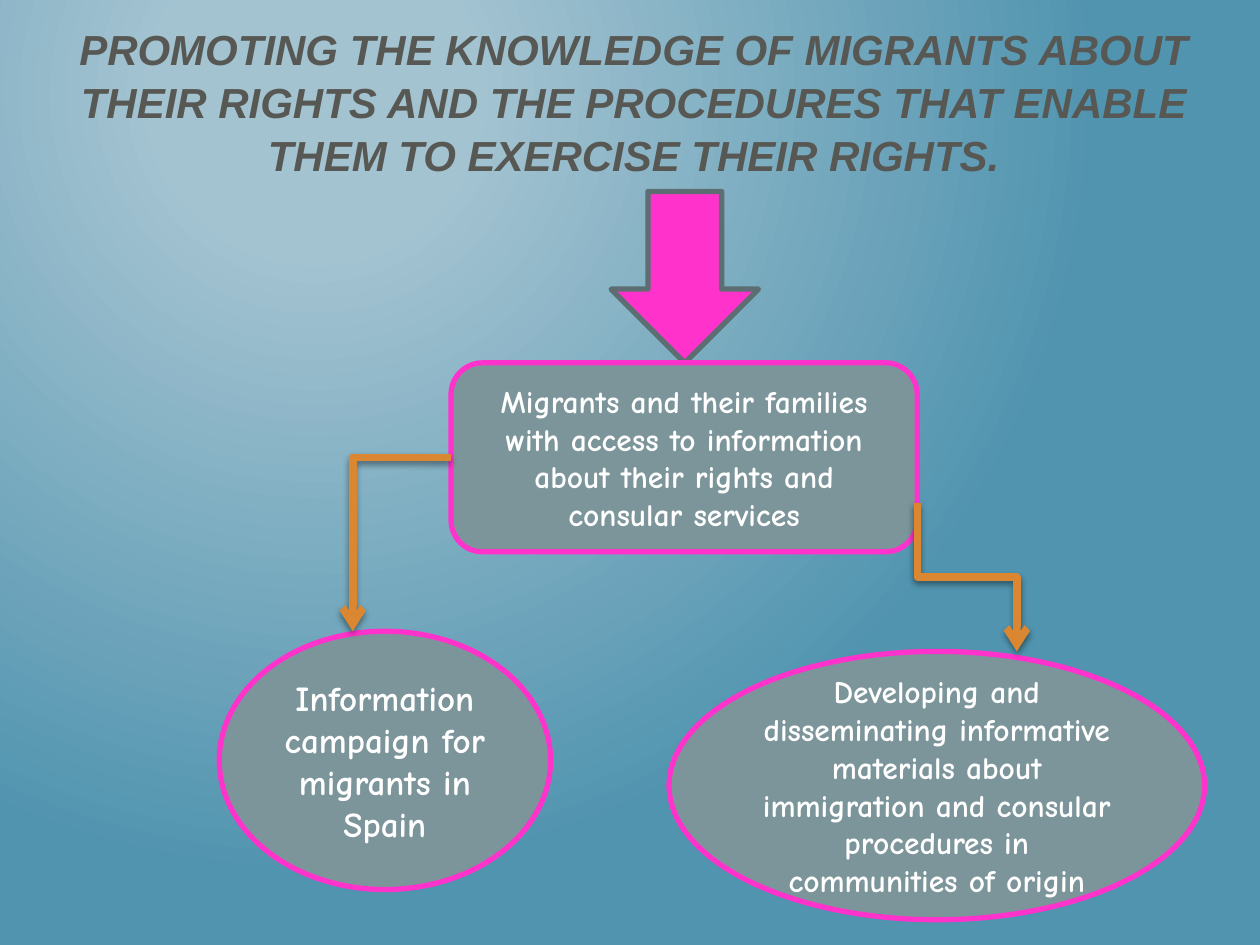
from lxml.etree import SubElement
from pptx import Presentation
from pptx.dml.color import RGBColor
from pptx.enum.shapes import MSO_CONNECTOR, MSO_SHAPE
from pptx.enum.text import MSO_ANCHOR, PP_ALIGN
from pptx.oxml import parse_xml
from pptx.oxml.ns import nsdecls, qn
from pptx.util import Inches, Pt

THEME = {
    "ink": "575853", "text": "FFFFFF", "fill": "7C959A", "pink": "FF33CC",
    "edge": "5C6E72", "link": "DB8631", "glow": "A3C3D1", "back": "5194AF",
    "head": "Arial", "body": "Comic Neue",
    "title": 24, "large": 20, "small": 18, "line": 3, "wire": 4.3,
}
TITLE = ("PROMOTING THE KNOWLEDGE OF MIGRANTS ABOUT THEIR RIGHTS AND THE "
         "PROCEDURES THAT ENABLE THEM TO EXERCISE THEIR RIGHTS.")
SHAPES = [
    (MSO_SHAPE.OVAL, (1.74, 5.01, 2.63, 2.05), "fill", "pink", "large",
     "Information campaign for migrants in Spain"),
    (MSO_SHAPE.DOWN_ARROW, (4.85, 1.52, 1.17, 1.36), "pink", "edge", "small", ""),
    (MSO_SHAPE.ROUNDED_RECTANGLE, (3.58, 2.88, 3.7, 1.5), "fill", "pink", "small",
     "Migrants and their families with access to information about their "
     "rights and consular services"),
    (MSO_SHAPE.OVAL, (5.31, 5.17, 4.25, 2.13), "fill", "pink", "small",
     "Developing and disseminating informative materials about immigration "
     "and consular procedures in communities of origin"),
]
LINKS = [
    ((7.28, 3.99), (8.07, 5.17), "bentConnector3"),
    ((3.58, 3.63), (2.8, 5.01), "bentConnector2"),
]
SHADE = (f'<a:effectLst {nsdecls("a")}><a:outerShdw blurRad="{Pt(4)}" dist="{Pt(2)}" '
         'dir="5400000" rotWithShape="0"><a:srgbClr val="000000"><a:alpha val="44000"/>'
         '</a:srgbClr></a:outerShdw></a:effectLst>')
GLOW = (f'<a:path {nsdecls("a")} path="circle">'
        '<a:fillToRect l="50000" t="20000" r="100000" b="100000"/></a:path>')


def color(key):
    return RGBColor.from_string(THEME[key])


def paint(slide):
    fill = slide.background.fill
    fill.gradient()
    for stop, key, place in zip(fill.gradient_stops, ("glow", "back"), (0.2, 1)):
        stop.color.rgb = color(key)
        stop.position = place
    grad = slide.element.find(".//" + qn("a:gradFill"))
    grad.replace(grad.find(qn("a:lin")), parse_xml(GLOW))


def write(shape, text, face, size, ink, slant=False):
    frame = shape.text_frame
    frame.word_wrap = True
    para = frame.paragraphs[0]
    para.text = text
    para.alignment = PP_ALIGN.CENTER
    font = para.font
    font.name, font.size = THEME[face], Pt(THEME[size])
    font.bold, font.italic = True, slant
    font.color.rgb = color(ink)
    return frame


def draw(slide, kind, box, fill, line, size, text):
    shape = slide.shapes.add_shape(kind, *map(Inches, box))
    shape.shadow.inherit = False
    shape.fill.solid()
    shape.fill.fore_color.rgb = color(fill)
    shape.line.color.rgb = color(line)
    shape.line.width = Pt(THEME["line"])
    if text:
        write(shape, text, "body", size, "text").vertical_anchor = MSO_ANCHOR.MIDDLE


def link(slide, start, end, bend):
    (x1, y1), (x2, y2) = start, end
    turn = bend == "bentConnector3"
    if turn:
        midx, midy = (x1 + x2) / 2, (y1 + y2) / 2
        wide, high = (y2 - y1) / 2, (x2 - x1) / 2
        x1, x2, y1, y2 = midx - wide, midx + wide, midy - high, midy + high
    wire = slide.shapes.add_connector(MSO_CONNECTOR.ELBOW, *map(Inches, (x1, y1, x2, y2)))
    wire.line.color.rgb = color("link")
    wire.line.width = Pt(THEME["wire"])
    props = wire.element.spPr
    props.find(qn("a:prstGeom")).set("prst", bend)
    if turn:
        frame = props.find(qn("a:xfrm"))
        frame.set("rot", str(270 * 60000))
        frame.set("flipH", "1")
    SubElement(props.find(qn("a:ln")), qn("a:tailEnd"), type="arrow")
    props.append(parse_xml(SHADE))


def main():
    """Build the slide on migrants' rights and save it."""
    deck = Presentation()
    deck.slide_width, deck.slide_height = Inches(10), Inches(7.5)
    slide = deck.slides.add_slide(deck.slide_layouts[6])
    paint(slide)
    title = slide.shapes.add_textbox(*map(Inches, (0.49, 0.12, 9.08, 1.36)))
    frame = write(title, TITLE, "head", "title", "ink", True)
    frame.paragraphs[0].line_spacing = 1.05
    for item in SHAPES:
        draw(slide, *item)
    for item in LINKS:
        link(slide, *item)
    deck.save("out.pptx")


if __name__ == "__main__":
    main()
